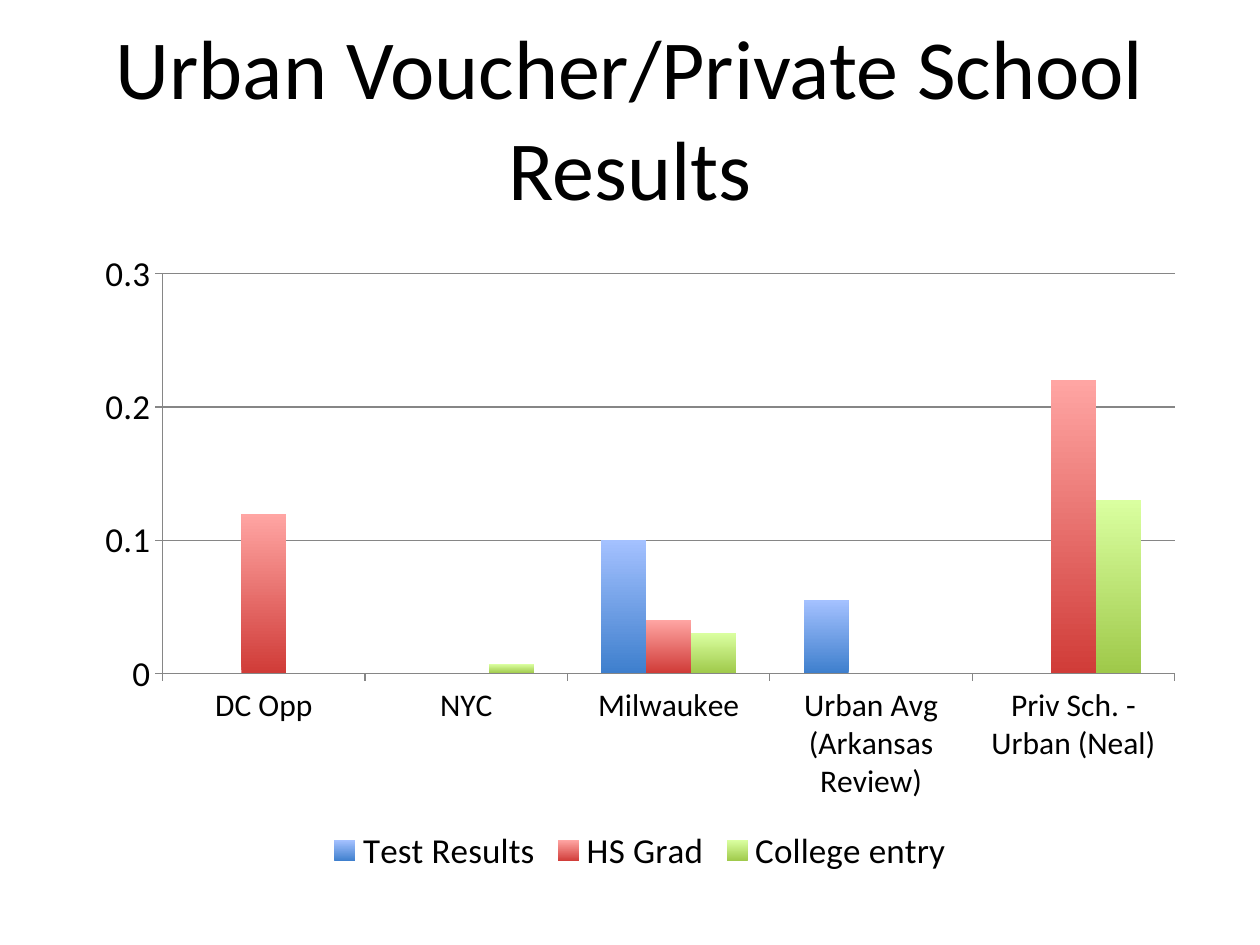
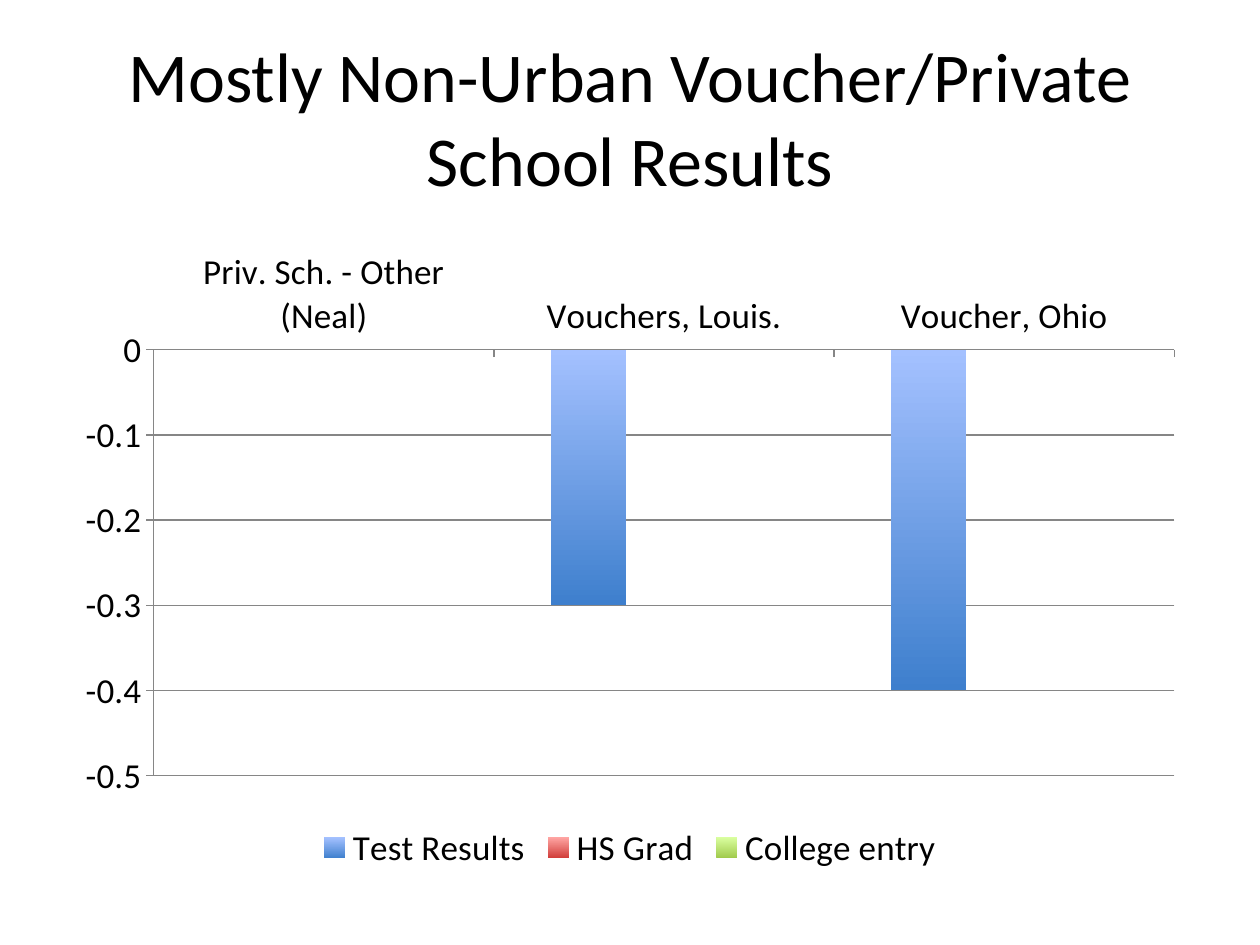
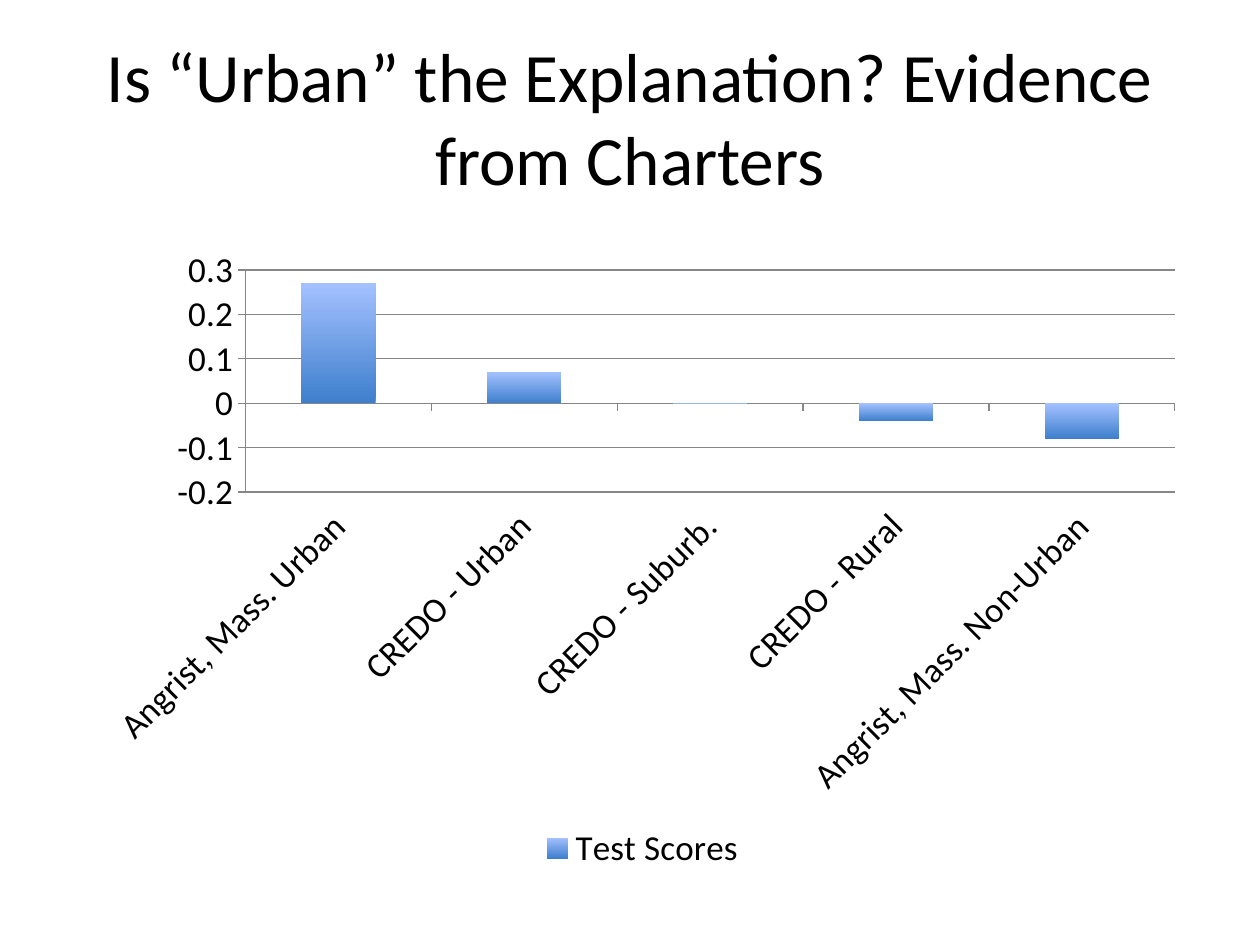
from pptx import Presentation
from pptx.chart.data import CategoryChartData as Data
from pptx.dml.color import RGBColor
from pptx.enum.chart import XL_CHART_TYPE as Kind
from pptx.enum.chart import XL_LEGEND_POSITION as Spot
from pptx.enum.chart import XL_TICK_LABEL_POSITION as Label
from pptx.enum.chart import XL_TICK_MARK as Tick
from pptx.enum.text import MSO_ANCHOR as Anchor
from pptx.enum.text import MSO_AUTO_SIZE as Fit
from pptx.enum.text import PP_ALIGN as Align
from pptx.oxml.ns import qn
from pptx.util import Pt

FONT = "Calibri"
HEX = {"text": "000000", "grid": "868686", "page": "FFFFFF"}
# Bottom and top shade of each series
BARS = [("3E7FCD", "A4C1FF"), ("D03C38", "FFA5A3"), ("9FC94A", "DAFFA0")]
HEAD = (36, 21.6, 648, 90)
NAMES = ["Test Results", "HS Grad", "College entry"]

SLIDES = [
    dict(title="Urban Voucher/Private School Results", size=48,
         box=(47.5, 136.8, 636.5, 365.8), span=(0, 0.3), small=18,
         cats=["DC Opp", "NYC", "Milwaukee", "Urban Avg (Arkansas Review)",
               "Priv Sch. - Urban (Neal)"],
         rows=dict(zip(NAMES, [(0, None, 0.1, 0.055, None),
                               (0.12, None, 0.04, None, 0.22),
                               (None, 0.007, 0.03, None, 0.13)]))),
    dict(title="Mostly Non-Urban Voucher/Private School Results", size=40,
         box=(36, 136, 648, 365), span=(-0.5, 0), spot=Label.HIGH,
         cats=["Priv. Sch. - Other (Neal)", "Vouchers, Louis.",
               "Voucher, Ohio"],
         rows=dict(zip(NAMES, [(None, -0.3, -0.4), (0, None, None),
                               (0, None, None)]))),
    dict(title="Is “Urban” the Explanation? Evidence from Charters",
         size=39.6, box=(50.4, 134.6, 633.6, 366.5), span=(-0.2, 0.3),
         spot=Label.LOW, turn=-45,
         cats=["Angrist, Mass. Urban", "CREDO - Urban", "CREDO - Suburb.",
               "CREDO - Rural", "Angrist, Mass. Non-Urban"],
         rows={"Test Scores": (0.27, 0.07, 0, -0.04, -0.08)}),
]


def rgb(name):
    return RGBColor.from_string(HEX.get(name, name))


def style(font, size):
    font.name, font.size, font.bold = FONT, Pt(size), False
    font.color.rgb = rgb("text")


def add_head(slide, box, text, size):
    head = slide.shapes.title
    head.left, head.top, head.width, head.height = map(Pt, box)
    frame = head.text_frame
    frame.auto_size, frame.word_wrap = Fit.NONE, True
    frame.vertical_anchor = Anchor.MIDDLE
    para = frame.paragraphs[0]
    para.alignment = Align.CENTER
    run = para.add_run()
    run.text = text
    style(run.font, size)


def set_axis(axis, size, spot, turn=0):
    axis.major_tick_mark, axis.minor_tick_mark = Tick.OUTSIDE, Tick.NONE
    axis.tick_label_position = spot
    axis.format.line.color.rgb = rgb("grid")
    axis.format.line.width = Pt(0.75)
    style(axis.tick_labels.font, size)
    if turn:
        body = axis._element.find(qn("c:txPr")).find(qn("a:bodyPr"))
        body.set("rot", str(turn * 60000))
        body.set("vert", "horz")


def add_bars(slide, box, cats, rows, span, small=20,
             spot=Label.NEXT_TO_AXIS, turn=0):
    data = Data()
    data.categories = cats
    for name, vals in rows.items():
        data.add_series(name, vals)
    chart = slide.shapes.add_chart(
        Kind.COLUMN_CLUSTERED, *map(Pt, box), data).chart
    style(chart.font, 10)
    chart.has_title = False

    # Legend
    chart.has_legend = True
    chart.legend.position = Spot.BOTTOM
    chart.legend.include_in_layout = False
    style(chart.legend.font, 20)

    # Axes and grid
    set_axis(chart.category_axis, small, spot, turn)
    axis = chart.value_axis
    set_axis(axis, 20, Label.LOW)
    axis.minimum_scale, axis.maximum_scale = span
    axis.major_unit = 0.1
    axis.has_major_gridlines = True
    grid = axis.major_gridlines.format.line
    grid.color.rgb, grid.width = rgb("grid"), Pt(0.75)

    # Columns
    plot = chart.plots[0]
    plot.gap_width, plot.overlap = 150, 0
    plot.vary_by_categories = False
    for row, pair in zip(plot.series, BARS):
        row.invert_if_negative = False
        fill = row.format.fill
        fill.gradient()
        fill.gradient_angle = 90
        for stop, shade in zip(fill.gradient_stops, pair):
            stop.color.rgb = rgb(shade)
        row.format.line.fill.background()


def add_page(deck, title, size, **chart):
    slide = deck.slides.add_slide(deck.slide_layouts[5])
    slide.background.fill.solid()
    slide.background.fill.fore_color.rgb = rgb("page")
    add_head(slide, HEAD, title, size)
    add_bars(slide, **chart)


def main():
    deck = Presentation()
    deck.slide_width, deck.slide_height = Pt(720), Pt(540)
    for page in SLIDES:
        add_page(deck, **page)
    deck.save("out.pptx")


if __name__ == "__main__":
    main()
